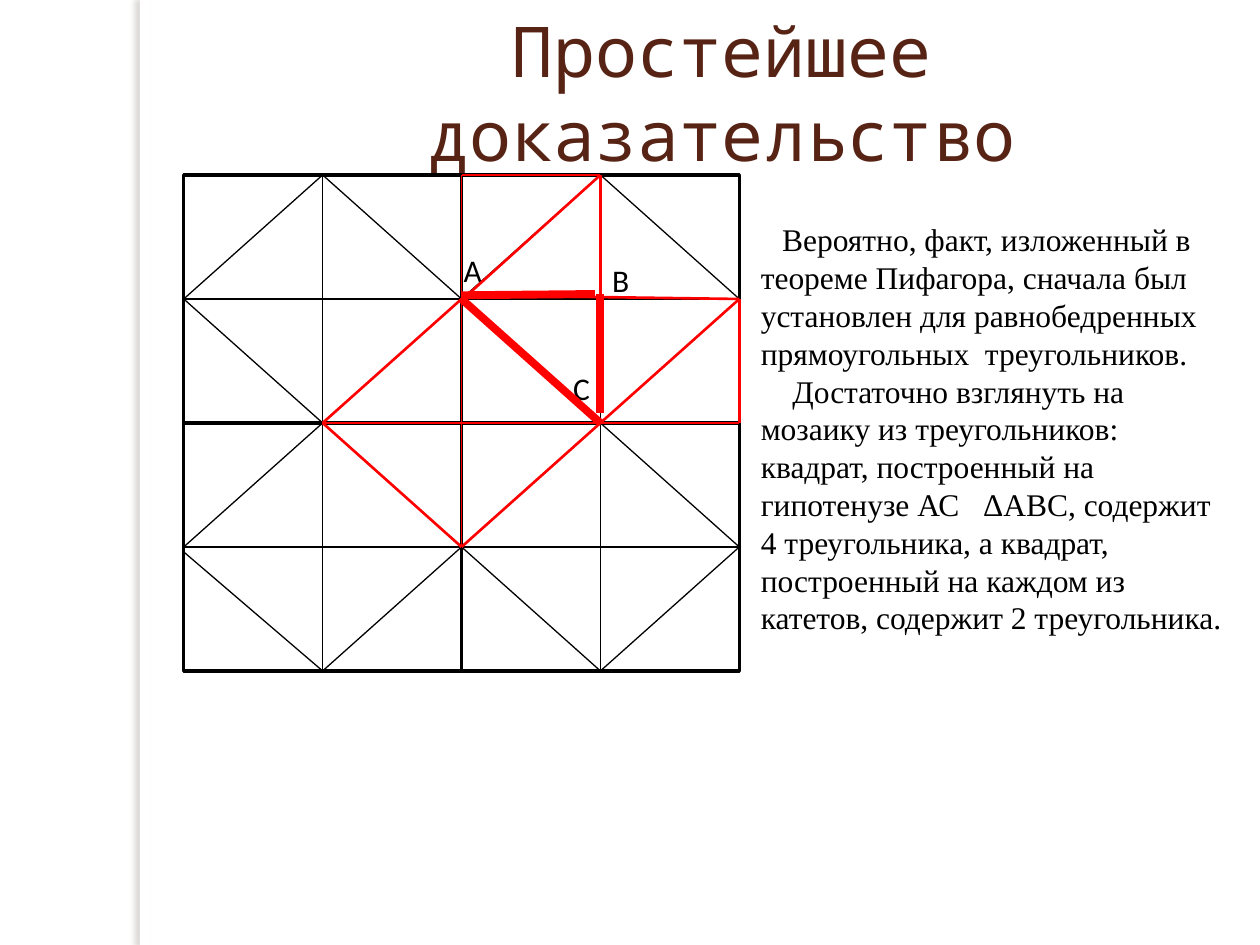
from dataclasses import dataclass

from lxml import etree
from pptx import Presentation
from pptx.dml.color import RGBColor
from pptx.enum.shapes import MSO_CONNECTOR, MSO_SHAPE
from pptx.enum.text import MSO_ANCHOR, MSO_AUTO_SIZE, PP_ALIGN
from pptx.oxml.ns import qn
from pptx.util import Pt

STRAIGHT = MSO_CONNECTOR.STRAIGHT
RECT = MSO_SHAPE.RECTANGLE
MIDDLE = MSO_ANCHOR.MIDDLE
GROW = MSO_AUTO_SIZE.SHAPE_TO_FIT_TEXT
CENTER = PP_ALIGN.CENTER


@dataclass(frozen=True)
class Theme:
    """Colours, fonts and type sizes of the slide."""
    white: RGBColor = RGBColor(255, 255, 255)
    black: RGBColor = RGBColor(0, 0, 0)
    red: RGBColor = RGBColor(255, 0, 0)
    brown: RGBColor = RGBColor(0x57, 0x23, 0x14)
    shade: str = "736F63"
    head: str = "Noto Sans Mono"
    label: str = "Calibri"
    body: str = "Times New Roman"
    big: int = 40
    small: int = 18


THEME = Theme()
TITLE = "Простейшее доказательство"
PARAS = [
    (12.2, "Вероятно, факт, изложенный в теореме Пифагора, сначала был установлен "
           "для равнобедренных  прямоугольных  треугольников."),
    (18, "Достаточно взглянуть на мозаику из треугольников: квадрат, построенный "
         "на гипотенузе АС   ΔАВС, содержит 4 треугольника, а квадрат, "
         "построенный на каждом из катетов, содержит 2 треугольника."),
]
LABELS = [("А", 257.8, 139.7, 17.3), ("В", 342.7, 145.4, 22.3), ("С", 320.4, 207.4, 22.3)]
QUADS = [(0, 0), (2, 0), (0, 2), (2, 2)]
SIDES = [(1, 0), (0, 1), (1, 2), (2, 1)]

THIN = [
    ((0, 1), (4, 1)), ((0, 3), (4, 3)), ((1, 0), (1, 4)), ((3, 0), (3, 4)),
    ((1, 0), (0, 1)), ((1, 0), (2, 1)), ((3, 0), (0, 3)), ((0, 1), (3, 4)),
    ((2, 1), (4, 3)), ((3, 0), (4, 1)), ((4, 1), (1, 4)), ((0, 3.04), (1, 4)),
    ((4, 3), (3, 4)),
]
MARKS = [
    (4.5, (3, 2), (2, 1)), (1.5, (2, 1), (1, 2)), (1.5, (1, 2), (2, 3)),
    (1.5, (3, 2), (2, 3)), (1.5, (1, 2), (3, 2)), (0.75, (2, 1), (2, 3)),
    (4.5, (3, 0.96), (3, 1.92)), (4.5, (2, 0.97), (2.96, 0.96)),
    (1.5, (3, 1.04), (3, 0)), (0.75, (2, 0), (3, 0)), (1, (2, 0), (2, 1)),
    (1.5, (3, 0), (2.04, 0.97)), (1.5, (2.04, 0.97), (4, 1)),
    (1.5, (4, 1), (3, 2)), (1.5, (3, 2), (4, 2)), (1.5, (4, 2), (4, 1)),
]


def set_font(para, name, size, color):
    """Set the font of a whole paragraph."""
    para.font.name = name
    para.font.size = Pt(size)
    para.font.color.rgb = color


def add_rect(slide, box):
    """Add a white rectangle without shadow."""
    rect = slide.shapes.add_shape(RECT, *map(Pt, box))
    rect.shadow.inherit = False
    rect.fill.solid()
    rect.fill.fore_color.rgb = THEME.white
    return rect


def add_band(slide, box):
    """Add the side band with its soft shadow to the left."""
    band = add_rect(slide, box)
    band.line.fill.background()
    effects = band.element.spPr.find(qn("a:effectLst"))
    shadow = etree.SubElement(effects, qn("a:outerShdw"), blurRad=str(Pt(3)),
                              dist=str(Pt(3)), dir="10800000", algn="tl", rotWithShape="0")
    color = etree.SubElement(shadow, qn("a:srgbClr"), val=THEME.shade)
    etree.SubElement(color, qn("a:alpha"), val="25000")


def add_title(slide, box):
    """Place and format the title."""
    title = slide.shapes.title
    title.left, title.top, title.width, title.height = map(Pt, box)
    frame = title.text_frame
    frame.text = TITLE
    frame.word_wrap = True
    frame.vertical_anchor = MIDDLE
    para = frame.paragraphs[0]
    para.alignment = CENTER
    set_font(para, THEME.head, THEME.big, THEME.brown)


def add_grid(slide, box):
    """Draw the four squares and thin lines, then labels and red marks."""
    left, top, width, height = box
    wide, high = width / 4, height / 4
    ports = {}

    def spot(point):
        """Turn a grid point into slide lengths."""
        return Pt(left + point[0] * wide), Pt(top + point[1] * high)

    def draw(start, end, color, weight):
        """Draw a line, joined to squares where it meets a side's middle."""
        line = slide.shapes.add_connector(STRAIGHT, *spot(start), *spot(end))
        if start in ports:
            line.begin_connect(*ports[start])
        if end in ports:
            line.end_connect(*ports[end])
        line.line.color.rgb = color
        line.line.width = Pt(weight)
        etree.SubElement(line.element.spPr, qn("a:effectLst"))

    for col, row in QUADS:
        quad = add_rect(slide, (left + col * wide, top + row * high, 2 * wide, 2 * high))
        quad.line.color.rgb = THEME.black
        quad.line.width = Pt(2)
        for side, (right, down) in enumerate(SIDES):
            ports[col + right, row + down] = quad, side
    for start, end in THIN:
        draw(start, end, THEME.black, 0.75)
    for text, x, y, span in LABELS:
        add_text(slide, (x, y, span, 28.8), [(0, text)], THEME.label)
    for weight, start, end in MARKS:
        draw(start, end, THEME.red, weight)


def add_text(slide, box, paras, font):
    """Add a text box of paragraphs with first-line indents."""
    frame = slide.shapes.add_textbox(*map(Pt, box)).text_frame
    frame.word_wrap = True
    frame.auto_size = GROW
    for index, (indent, text) in enumerate(paras):
        para = frame.add_paragraph() if index else frame.paragraphs[0]
        para.text = text
        set_font(para, font, THEME.small, THEME.black)
        if indent:
            props = para._p.get_or_add_pPr()
            props.set("marL", "0")
            props.set("indent", str(Pt(indent)))


def main():
    """Build and save the slide."""
    deck = Presentation()
    deck.slide_width, deck.slide_height = Pt(720), Pt(540)
    slide = deck.slides.add_slide(deck.slide_layouts[5])
    add_band(slide, (80, 0, 5.76, 540))
    add_title(slide, (129.6, 21.6, 565.2, 61.2))
    add_grid(slide, (105, 100, 317.5, 283.4))
    add_text(slide, (427.7, 122.4, 277.9, 247), PARAS, THEME.body)
    deck.save("out.pptx")


if __name__ == "__main__":
    main()
